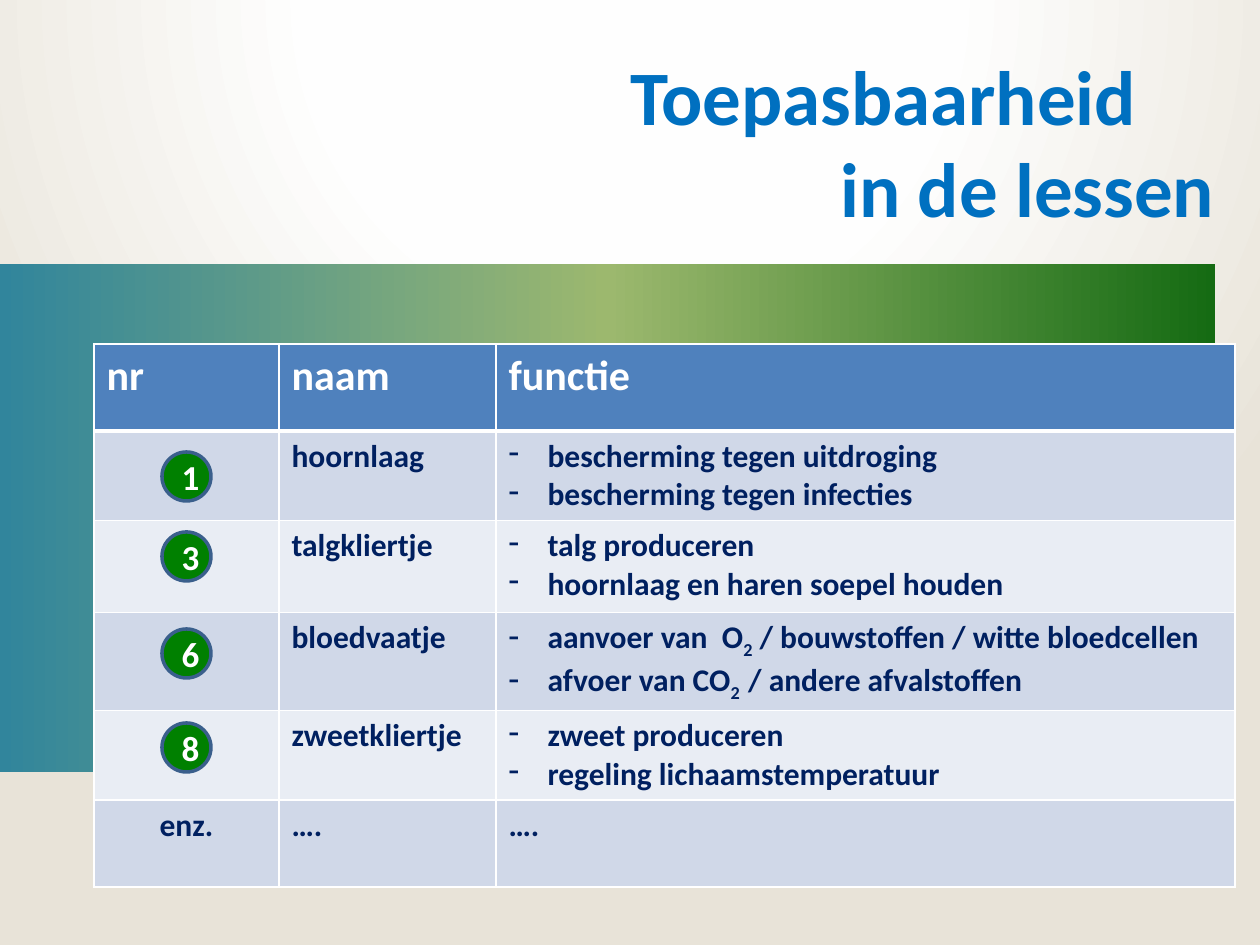
import pptx
import pptx.util
import pptx.dml.color
import pptx.enum.shapes
import pptx.enum.text
import pptx.oxml
import pptx.oxml.ns

RGBColor = pptx.dml.color.RGBColor
ALIGN = pptx.enum.text.PP_ALIGN
ANCHOR = pptx.enum.text.MSO_ANCHOR

WHITE = RGBColor(0xFF, 0xFF, 0xFF)
TITLE_BLUE = RGBColor(0x00, 0x70, 0xC0)
NAVY = RGBColor(0x00, 0x20, 0x60)
HEADER_BLUE = RGBColor(0x4F, 0x81, 0xBD)
BANDS = [RGBColor(0xD0, 0xD8, 0xE8), RGBColor(0xE9, 0xED, 0xF4)]
GREEN = RGBColor(0x00, 0x80, 0x00)
BADGE_LINE = RGBColor(0x3A, 0x5F, 0x8C)
PAGE_STOPS = [(0, WHITE), (40, RGBColor(0xFE, 0xFE, 0xFE)), (100, RGBColor(0xE8, 0xE3, 0xD8))]
BAND_STOPS = [(0, RGBColor(0x31, 0x85, 0x9C)), (50, RGBColor(0x9C, 0xB8, 0x6E)),
              (100, RGBColor(0x15, 0x6B, 0x13))]
RADIAL = ('<a:path path="circle"><a:fillToRect l="50000" t="-80000" '
          'r="50000" b="180000"/></a:path>')
LINEAR = '<a:lin ang="0" scaled="0"/>'

TITLE_FONT = {"name": "Calibri", "size": pptx.util.Pt(44), "bold": True}
HEADER_FONT = {"name": "Calibri", "size": pptx.util.Pt(24), "bold": True}
BODY_FONT = {"name": "Calibri", "size": pptx.util.Pt(18), "bold": True}
BADGE_FONT = {"name": "Calibri", "size": pptx.util.Pt(20), "bold": True}

COLUMNS = [185, 217, 739]
ROWS = [87, 89, 92, 98, 89, 87]
HEADINGS = ["nr", "naam", "functie"]
# Each function line is a list of spans; every second span is a subscript.
SKIN_PARTS = [
    ("hoornlaag", [["bescherming tegen uitdroging"], ["bescherming tegen infecties"]]),
    ("talgkliertje", [["talg produceren"], ["hoornlaag en haren soepel houden"]]),
    ("bloedvaatje", [["aanvoer van  O", "2", " / bouwstoffen / witte bloedcellen"],
                     ["afvoer van CO", "2  ", "/ andere afvalstoffen"]]),
    ("zweetkliertje", [["zweet produceren"], ["regeling lichaamstemperatuur"]]),
]
BADGES = {"1": 452, "3": 532, "6": 629, "8": 723}


def px(length):
    return pptx.util.Emu(round(length * 914400 / 126))


def from_xml(text):
    return pptx.oxml.parse_xml(text.replace(">", f' {pptx.oxml.ns.nsdecls("a")}>', 1))


def apply_gradient(fill, owner, stops, shade):
    """Fill with the given stops; owner is the XML element that holds the fill."""
    fill.gradient()
    old = owner.find(".//" + pptx.oxml.ns.qn("a:gradFill"))
    marks = "".join(f'<a:gs pos="{place * 1000}"><a:srgbClr val="{color}"/></a:gs>'
                    for place, color in stops)
    new = from_xml(f"<a:gradFill><a:gsLst>{marks}</a:gsLst>{shade}</a:gradFill>")
    old.getparent().replace(old, new)


def write_spans(para, spans, font, color):
    for index, text in enumerate(spans):
        span = para.add_run()
        span.text = text
        for key, value in font.items():
            setattr(span.font, key, value)
        span.font.color.rgb = color
        if index % 2:
            span.font._element.set("baseline", "-25000")


def add_dash(para):
    properties = para._p.get_or_add_pPr()
    properties.set("marL", str(px(39)))
    properties.set("indent", str(-px(39)))
    properties.append(from_xml('<a:buChar char="-"></a:buChar>'))


def write_cell(cell, lines, font, color, dashed=False, align=ALIGN.LEFT):
    for index, spans in enumerate(lines):
        frame = cell.text_frame
        para = frame.add_paragraph() if index else frame.paragraphs[0]
        para.alignment = align
        if dashed:
            add_dash(para)
        write_spans(para, spans, font, color)


def style_cell(cell, color, bottom):
    """Set white borders, with the bottom width in points, and a solid fill."""
    properties = cell._tc.get_or_add_tcPr()
    for side, width in {"L": 1, "R": 1, "T": 1, "B": bottom}.items():
        properties.append(from_xml(
            f'<a:ln{side} w="{pptx.util.Pt(width)}"><a:solidFill>'
            f'<a:srgbClr val="{WHITE}"/></a:solidFill></a:ln{side}>'))
    cell.fill.solid()
    cell.fill.fore_color.rgb = color


def add_skin_table(page):
    table = page.shapes.add_table(len(ROWS), len(COLUMNS), px(94), px(344),
                                  px(sum(COLUMNS)), px(sum(ROWS))).table
    for column, width in zip(table.columns, COLUMNS):
        column.width = px(width)
    for index, (row, height) in enumerate(zip(table.rows, ROWS)):
        row.height = px(height)
        for cell in row.cells:
            style_cell(cell, BANDS[(index - 1) % 2] if index else HEADER_BLUE,
                       1 if index else 3)
    for column, heading in enumerate(HEADINGS):
        write_cell(table.cell(0, column), [[heading]], HEADER_FONT, WHITE)
    for row, (name, functions) in enumerate(SKIN_PARTS, 1):
        write_cell(table.cell(row, 1), [[name]], BODY_FONT, NAVY)
        write_cell(table.cell(row, 2), functions, BODY_FONT, NAVY, dashed=True)
    last = len(ROWS) - 1
    write_cell(table.cell(last, 0), [["enz."]], BODY_FONT, NAVY, align=ALIGN.CENTER)
    for column in (1, 2):
        write_cell(table.cell(last, column), [["…."]], BODY_FONT, NAVY)


def add_plain_shape(page, kind, left, top, width, height):
    shape = page.shapes.add_shape(kind, px(left), px(top), px(width), px(height))
    shape.shadow.inherit = False
    return shape


def add_band(page):
    band = add_plain_shape(page, pptx.enum.shapes.MSO_SHAPE.RECTANGLE, 0, 264, 1215, 508)
    band.line.fill.background()
    apply_gradient(band.fill, band.element, BAND_STOPS, LINEAR)


def add_badge(page, number, top):
    badge = add_plain_shape(page, pptx.enum.shapes.MSO_SHAPE.OVAL, 162, top, 49, 49)
    badge.fill.solid()
    badge.fill.fore_color.rgb = GREEN
    badge.line.color.rgb = BADGE_LINE
    badge.line.width = pptx.util.Pt(2)
    badge.text_frame.vertical_anchor = ANCHOR.MIDDLE
    para = badge.text_frame.paragraphs[0]
    para.alignment = ALIGN.CENTER
    write_spans(para, [number], BADGE_FONT, WHITE)


def fill_title(title):
    place = {"left": px(630), "top": px(48), "width": px(585), "height": px(271)}
    for key, value in place.items():
        setattr(title, key, value)
    frame = title.text_frame
    layout = {"margin_left": 0, "margin_top": 0, "margin_right": 0, "margin_bottom": 0,
              "vertical_anchor": ANCHOR.TOP, "word_wrap": True,
              "auto_size": pptx.enum.text.MSO_AUTO_SIZE.NONE}
    for key, value in layout.items():
        setattr(frame, key, value)
    first, second = frame.paragraphs[0], frame.add_paragraph()
    first.alignment, second.alignment = ALIGN.LEFT, ALIGN.RIGHT
    write_spans(first, ["Toepasbaarheid"], TITLE_FONT, TITLE_BLUE)
    write_spans(second, ["in de lessen"], TITLE_FONT, TITLE_BLUE)


def main():
    deck = pptx.Presentation()
    deck.slide_width, deck.slide_height = px(1260), px(945)
    page = deck.slides.add_slide(deck.slide_layouts[5])
    apply_gradient(page.background.fill, page.element, PAGE_STOPS, RADIAL)
    fill_title(page.shapes.title)
    add_band(page)
    add_skin_table(page)
    for number, top in BADGES.items():
        add_badge(page, number, top)
    deck.save("out.pptx")


if __name__ == "__main__":
    main()
